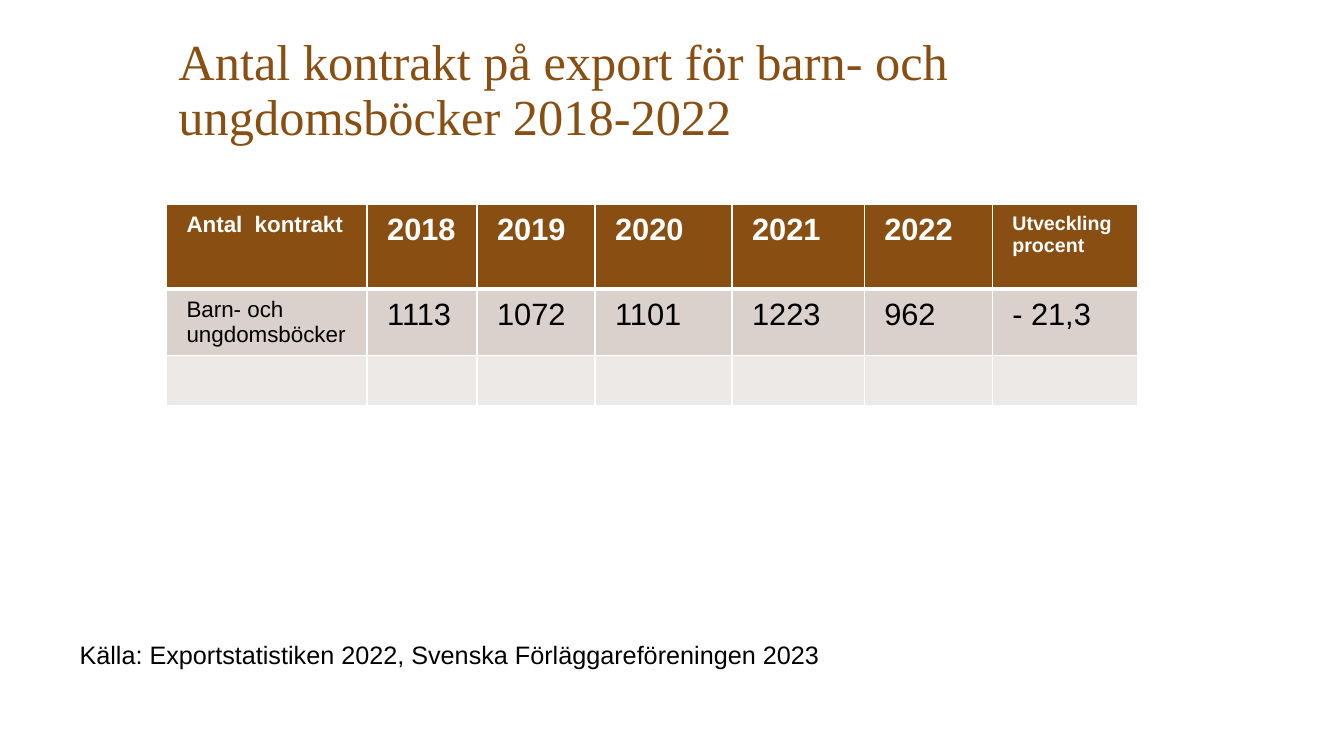
from pptx import Presentation
from pptx import util as u
from pptx.dml.color import RGBColor
from pptx.enum import text
from pptx.oxml import parse_xml
from pptx.oxml.ns import nsdecls

BROWN = RGBColor(0x89, 0x4E, 0x11)
BAND_DARK = RGBColor(0xDA, 0xD0, 0xCC)
BAND_LIGHT = RGBColor(0xED, 0xE9, 0xE7)
WHITE = RGBColor(0xFF, 0xFF, 0xFF)
BLACK = RGBColor(0, 0, 0)

HEADER = ["Antal  kontrakt", "2018", "2019", "2020", "2021", "2022", "Utveckling procent"]
VALUES = ["Barn- och ungdomsböcker", "1113", "1072", "1101", "1223", "962", "- 21,3"]
# Each row: texts, font sizes, fill, font colour, bold, top and bottom border
ROWS = [
    (HEADER, [16] + [22] * 5 + [14], BROWN, WHITE, True, 1, 3),
    (VALUES, [16] + [22] * 6, BAND_DARK, BLACK, False, 3, 1),
    ([""] * 7, [18] * 7, BAND_LIGHT, BLACK, False, 1, 1),
]


class Deck:
    """Holds the style and the current slide; lengths are percent of the slide."""
    title_font, body_font = "Times New Roman", "Arial"

    def __init__(self, width, height):
        self.prs = Presentation()
        self.prs.slide_width, self.prs.slide_height = u.Inches(width), u.Inches(height)
        self.s = self.prs.slides.add_slide(self.prs.slide_layouts[5])

    def x(self, share):
        return int(self.prs.slide_width * share / 100)

    def y(self, share):
        return int(self.prs.slide_height * share / 100)

    def box(self, left, top, width, height):
        return self.x(left), self.y(top), self.x(width), self.y(height)

    def set_text(self, tf, content, font, size, color, bold=False):
        tf.text = content
        p = tf.paragraphs[0]
        p.alignment = text.PP_ALIGN.LEFT
        for item in p.runs or [p]:
            f = item.font
            f.name, f.size, f.bold = font, u.Pt(size), bold
            f.color.rgb = color
        return p

    def title(self, content, *place):
        sp = self.s.shapes.title
        sp.left, sp.top, sp.width, sp.height = self.box(*place)
        tf = sp.text_frame
        tf.word_wrap, tf.auto_size = True, text.MSO_AUTO_SIZE.NONE
        tf.vertical_anchor = text.MSO_ANCHOR.BOTTOM
        tf.margin_left = tf.margin_top = tf.margin_right = 0
        tf.margin_bottom = u.Inches(0.31)
        self.set_text(tf, content, self.title_font, 36, BROWN).line_spacing = 0.9

    def note(self, content, *place):
        tf = self.s.shapes.add_textbox(*self.box(*place)).text_frame
        tf.word_wrap, tf.auto_size = True, text.MSO_AUTO_SIZE.SHAPE_TO_FIT_TEXT
        self.set_text(tf, content, self.body_font, 18, BLACK)

    def borders(self, cell, top, bottom):
        tc_pr = cell._tc.get_or_add_tcPr()
        for side, points in zip("LRTB", (1, 1, top, bottom)):
            tc_pr.append(parse_xml(
                f'<a:ln{side} {nsdecls("a")} w="{u.Pt(points)}"><a:solidFill>'
                f'<a:srgbClr val="{WHITE}"/></a:solidFill></a:ln{side}>'))

    def table(self, left, top, widths, heights):
        place = self.box(left, top, sum(widths), sum(heights))
        tbl = self.s.shapes.add_table(len(heights), len(widths), *place).table
        for col, width in zip(tbl.columns, widths):
            col.width = self.x(width)
        for row, height, style in zip(tbl.rows, heights, ROWS):
            row.height = self.y(height)
            texts, sizes, fill, color, bold, above, below = style
            for cell, content, size in zip(row.cells, texts, sizes):
                cell.margin_left = cell.margin_right = u.Inches(0.2)
                cell.margin_top = cell.margin_bottom = u.Inches(0.08)
                self.borders(cell, above, below)
                cell.fill.solid()
                cell.fill.fore_color.rgb = fill
                self.set_text(cell.text_frame, content, self.body_font, size, color, bold)


def main():
    deck = Deck(13.33, 7.5)
    # Heading
    deck.title("Antal kontrakt på export för barn- och ungdomsböcker 2018-2022",
               13.28, 4.27, 72.39, 19.2)
    # Contracts per year
    deck.table(12.38, 27.07, [14.93, 8.18, 8.78, 10.2, 9.83, 9.53, 10.8],
               [11.2, 8.6, 6.67])
    # Source line
    deck.note("Källa: Exportstatistiken 2022, Svenska Förläggareföreningen 2023",
              5.18, 83.87, 58.96, 5.33)
    deck.prs.save("out.pptx")


if __name__ == "__main__":
    main()
